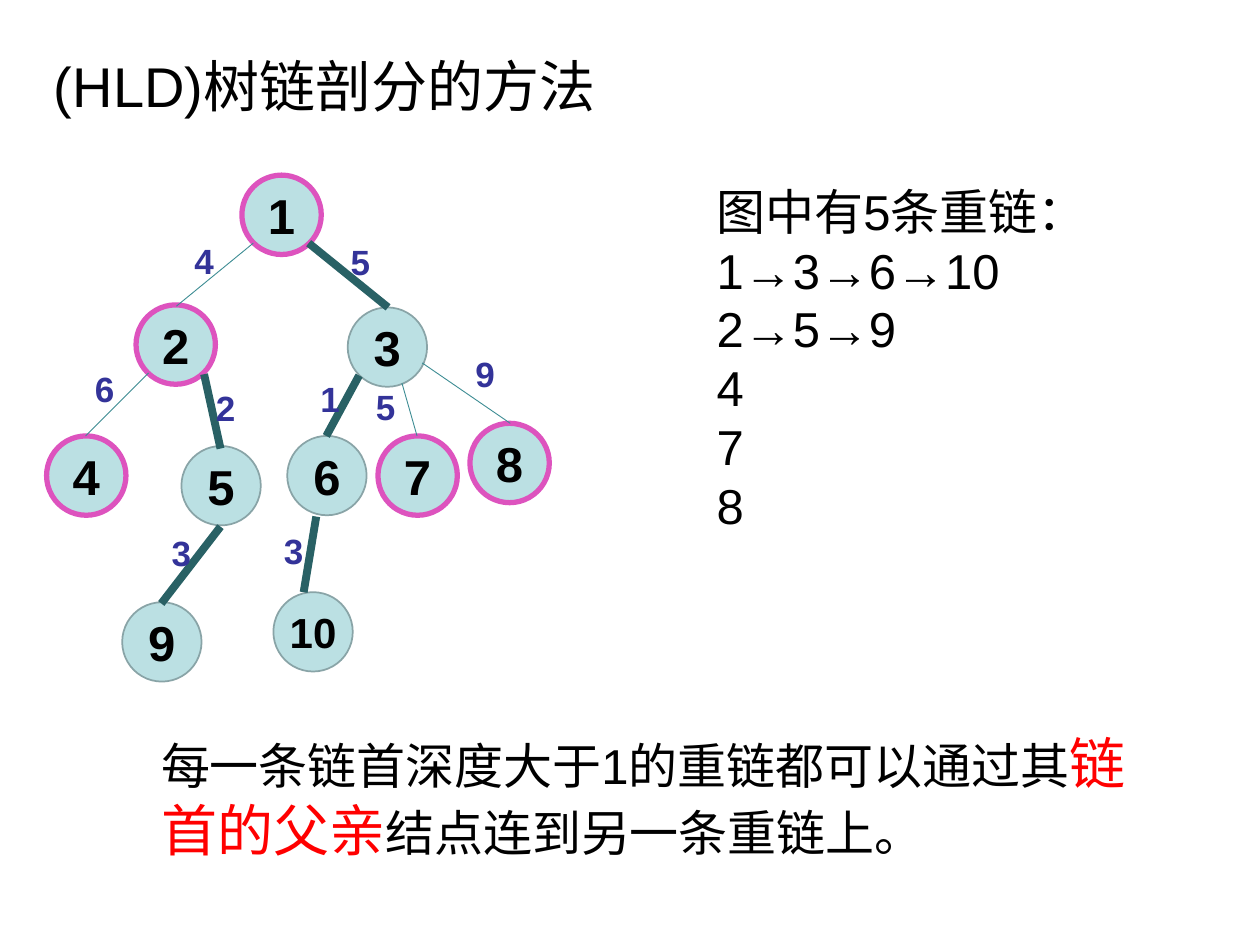
from dataclasses import dataclass

from lxml.etree import SubElement
from pptx import Presentation
from pptx.dml.color import RGBColor
from pptx.enum.shapes import MSO_CONNECTOR, MSO_SHAPE
from pptx.enum.text import MSO_ANCHOR, MSO_AUTO_SIZE, PP_ALIGN
from pptx.oxml.ns import qn
from pptx.util import Inches, Pt

BLACK = RGBColor(0x00, 0x00, 0x00)
RED = RGBColor(0xFF, 0x00, 0x00)
WEIGHT_BLUE = RGBColor(0x33, 0x33, 0x99)
NODE_FILL = RGBColor(0xBB, 0xE0, 0xE3)
NODE_LINE = RGBColor(0x89, 0xA4, 0xA7)
HEAD_LINE = RGBColor(0xDD, 0x53, 0xBE)
HEAVY = RGBColor(0x29, 0x61, 0x65)
LIGHT = RGBColor(0x3C, 0x8C, 0x93)

FONT = "Arial"
NODE_SIZE = 0.63
LABEL_W, LABEL_H = 0.44, 0.43


@dataclass
class Run:
    text: str
    size: int = 28
    color: RGBColor = BLACK
    bold: bool = False


@dataclass
class Node:
    label: str
    x: float
    y: float
    chain_head: bool = False


@dataclass
class Edge:
    start: tuple[float, float]
    end: tuple[float, float]
    weight: str
    label_at: tuple[float, float]
    heavy: bool = False


NODES = [
    Node("1", 1.92, 1.39, True),
    Node("2", 1.08, 2.42, True),
    Node("3", 2.76, 2.44),
    Node("4", 0.37, 3.46, True),
    Node("5", 1.44, 3.54),
    Node("6", 2.28, 3.46),
    Node("7", 3.0, 3.46, True),
    Node("8", 3.73, 3.36, True),
    Node("10", 2.17, 4.7),
    Node("9", 0.97, 4.78),
]

EDGES = [
    Edge((2.01, 1.93), (1.4, 2.43), "4", (1.4, 1.85)),
    Edge((2.45, 1.93), (3.08, 2.44), "5", (2.64, 1.86), True),
    Edge((1.18, 2.96), (0.68, 3.46), "6", (0.61, 2.87)),
    Edge((1.62, 2.97), (1.75, 3.56), "2", (1.57, 3.02), True),
    Edge((1.75, 4.18), (1.28, 4.79), "3", (1.22, 4.17), True),
    Edge((2.85, 2.98), (2.59, 3.46), "1", (2.4, 2.95), True),
    Edge((3.19, 3.04), (3.31, 3.46), "5", (2.84, 3.01)),
    Edge((3.35, 2.88), (4.05, 3.36), "9", (3.63, 2.75)),
    Edge((2.51, 4.1), (2.41, 4.7), "3", (2.11, 4.15), True),
]

CHAINS = ["图中有5条重链：", "1→3→6→10", "2→5→9", "4", "7", "8"]

CONCLUSION = [
    Run("每一条链首深度大于1的重链都可以通过其"),
    Run("链首的父亲", 32, RED),
    Run("结点连到另一条重链上。"),
]


def write(tf, paragraphs: list[list[Run]], align=PP_ALIGN.LEFT) -> None:
    for i, runs in enumerate(paragraphs):
        p = tf.add_paragraph() if i else tf.paragraphs[0]
        p.alignment = align
        p.line_spacing = Pt(1.2 * max(run.size for run in runs))
        for run in runs:
            r = p.add_run()
            r.text = run.text
            r.font.name = FONT
            r.font.size = Pt(run.size)
            r.font.bold = run.bold
            r.font.color.rgb = run.color


def add_text(s, x: float, y: float, w: float, h: float,
             paragraphs: list[list[Run]], align=PP_ALIGN.LEFT) -> None:
    tf = s.shapes.add_textbox(Inches(x), Inches(y), Inches(w), Inches(h)).text_frame
    tf.word_wrap = True
    tf.auto_size = MSO_AUTO_SIZE.SHAPE_TO_FIT_TEXT
    write(tf, paragraphs, align)


def add_node(s, node: Node) -> None:
    sp = s.shapes.add_shape(MSO_SHAPE.OVAL, Inches(node.x), Inches(node.y),
                            Inches(NODE_SIZE), Inches(NODE_SIZE))
    sp.shadow.inherit = False
    sp.fill.solid()
    sp.fill.fore_color.rgb = NODE_FILL
    sp.line.color.rgb = HEAD_LINE if node.chain_head else NODE_LINE
    sp.line.width = Pt(3 if node.chain_head else 1)
    tf = sp.text_frame
    tf.vertical_anchor = MSO_ANCHOR.MIDDLE
    two_digits = len(node.label) > 1
    if two_digits:
        tf.margin_left = tf.margin_right = tf.margin_top = tf.margin_bottom = 0
    write(tf, [[Run(node.label, 24 if two_digits else 28, bold=True)]], PP_ALIGN.CENTER)


def add_edge(s, edge: Edge) -> None:
    ends = [Inches(v) for v in edge.start + edge.end]
    line = s.shapes.add_connector(MSO_CONNECTOR.STRAIGHT, *ends)
    line.line.color.rgb = HEAVY if edge.heavy else LIGHT
    line.line.width = Pt(4.5 if edge.heavy else 0.5)
    SubElement(line._element.spPr, qn("a:effectLst"))


def main() -> None:
    prs = Presentation()
    prs.slide_width, prs.slide_height = Inches(10), Inches(7.5)
    s = prs.slides.add_slide(prs.slide_layouts[6])

    # Title
    add_text(s, 0.33, 0.36, 5.47, 0.63, [[Run("(HLD)树链剖分的方法", 32)]])

    # Tree: nodes, edges, then edge weights on top
    for node in NODES:
        add_node(s, node)
    for edge in EDGES:
        add_edge(s, edge)
    for edge in EDGES:
        add_text(s, *edge.label_at, LABEL_W, LABEL_H,
                 [[Run(edge.weight, 20, WEIGHT_BLUE, True)]], PP_ALIGN.CENTER)

    # Heavy chains and conclusion
    add_text(s, 5.59, 1.39, 3.5, 2.93, [[Run(chain)] for chain in CHAINS])
    add_text(s, 1.18, 5.73, 8.11, 1.18, [CONCLUSION])

    prs.save("out.pptx")


if __name__ == "__main__":
    main()
